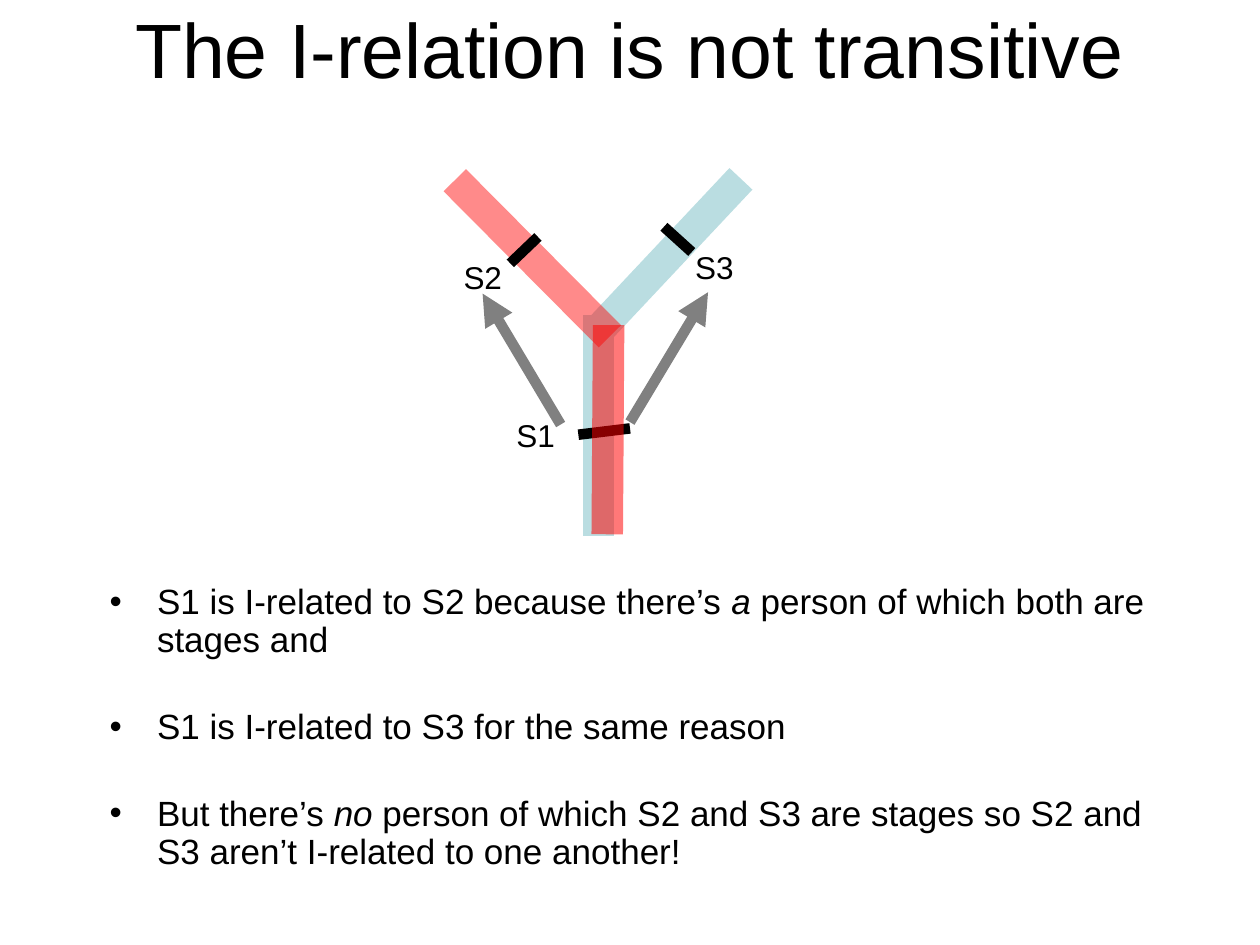
from dataclasses import dataclass

from lxml import etree
from pptx import Presentation
from pptx.dml.color import RGBColor
from pptx.enum import shapes, text
from pptx.oxml.ns import qn
from pptx.util import Pt


@dataclass(frozen=True)
class Theme:
    font: str = "Arial"
    ink: str = "000000"
    arrow: str = "808080"
    teal: str = "BADDE1"
    red: str = "FF0000"
    title_size: int = 44
    body_size: int = 20
    label_size: int = 18
    band: int = 18
    stroke: int = 6


THEME = Theme()

TITLE = "The I-relation is not transitive"
BULLETS = [
    [("S1 is I-related to S2 because there’s ", False), ("a", True),
     (" person of which both are stages and", False)],
    [("S1 is I-related to S3 for the same reason", False)],
    [("But there’s ", False), ("no", True),
     (" person of which S2 and S3 are stages so S2 and S3 aren’t "
      "I-related to one another!", False)],
]

TEAL_BANDS = [(342, 306, 342, 180), (344.2, 186.5, 423.4, 102.2)]
RED_BRANCH = (348.5, 192.2, 259.9, 103)
RED_STEM = (347, 305.3, 347.8, 185.8)
STAGE_MARKS = [
    (291.6, 150.5, 307.4, 135.4),
    (330.5, 248.4, 360, 244.8),
    (395.3, 144, 379.4, 129.6),
]
STAGE_LABELS = [("S1", 288, 234), ("S3", 390.2, 138.2), ("S2", 257.8, 144)]
ARROWS = [(360, 241.2, 404.6, 167), (320.4, 242.6, 275.8, 167.8)]


def place(s, left, top, width, height):
    s.left, s.top, s.width, s.height = map(Pt, (left, top, width, height))


def add_run(p, content, size, italic=False):
    r = p.add_run()
    r.text = content
    r.font.name = THEME.font
    r.font.size = Pt(size)
    r.font.italic = italic
    r.font.color.rgb = RGBColor.from_string(THEME.ink)


def fill_title(s):
    place(s, 54, 0, 612, 54)
    tf = s.text_frame
    tf.auto_size = text.MSO_AUTO_SIZE.NONE
    tf.vertical_anchor = text.MSO_ANCHOR.MIDDLE
    p = tf.paragraphs[0]
    p.alignment = text.PP_ALIGN.CENTER
    add_run(p, TITLE, THEME.title_size)


def fill_body(s):
    place(s, 55.5, 330.5, 612, 203.8)
    tf = s.text_frame
    tf.auto_size = text.MSO_AUTO_SIZE.NONE
    for i, runs in enumerate(BULLETS):
        p = tf.add_paragraph() if i else tf.paragraphs[0]
        p.line_spacing = 0.9
        p.space_before = Pt(4)
        p.space_after = Pt(24)
        pPr = p._p.get_or_add_pPr()
        pPr.set("marL", str(Pt(27)))
        pPr.set("indent", str(-Pt(27)))
        etree.SubElement(pPr, qn("a:buChar"), char="•")
        for content, italic in runs:
            add_run(p, content, THEME.body_size, italic)


def add_line(group, ends, color, width, opacity=100, arrow=False):
    s = group.shapes.add_connector(
        shapes.MSO_CONNECTOR.STRAIGHT, *map(Pt, ends))
    s.line.width = Pt(width)
    s.line.color.rgb = RGBColor.from_string(color)
    spPr = s._element.spPr
    ln = spPr.find(qn("a:ln"))
    if opacity < 100:
        clr = ln.find(".//" + qn("a:srgbClr"))
        etree.SubElement(clr, qn("a:alpha"), val=str(opacity * 1000))
    if arrow:
        etree.SubElement(ln, qn("a:tailEnd"), type="triangle")
    etree.SubElement(spPr, qn("a:effectLst"))


def add_label(group, content, left, top):
    s = group.shapes.add_textbox(Pt(left), Pt(top), Pt(40.3), Pt(28.8))
    tf = s.text_frame
    tf.word_wrap = True
    tf.auto_size = text.MSO_AUTO_SIZE.SHAPE_TO_FIT_TEXT
    p = tf.paragraphs[0]
    add_run(p, content, THEME.label_size)


def add_branching_diagram(slide):
    group = slide.shapes.add_group_shape()
    for ends in TEAL_BANDS:
        add_line(group, ends, THEME.teal, THEME.band)
    add_line(group, RED_BRANCH, THEME.red, THEME.band, opacity=46)
    for ends in STAGE_MARKS:
        add_line(group, ends, THEME.ink, THEME.stroke)
    for label in STAGE_LABELS:
        add_label(group, *label)
    for ends in ARROWS:
        add_line(group, ends, THEME.arrow, THEME.stroke, arrow=True)
    add_line(group, RED_STEM, THEME.red, THEME.band, opacity=53)


def main():
    prs = Presentation()
    prs.slide_width, prs.slide_height = Pt(720), Pt(540)
    slide = prs.slides.add_slide(prs.slide_layouts[1])
    fill_title(slide.shapes.title)
    fill_body(slide.placeholders[1])
    add_branching_diagram(slide)
    prs.save("out.pptx")


if __name__ == "__main__":
    main()
